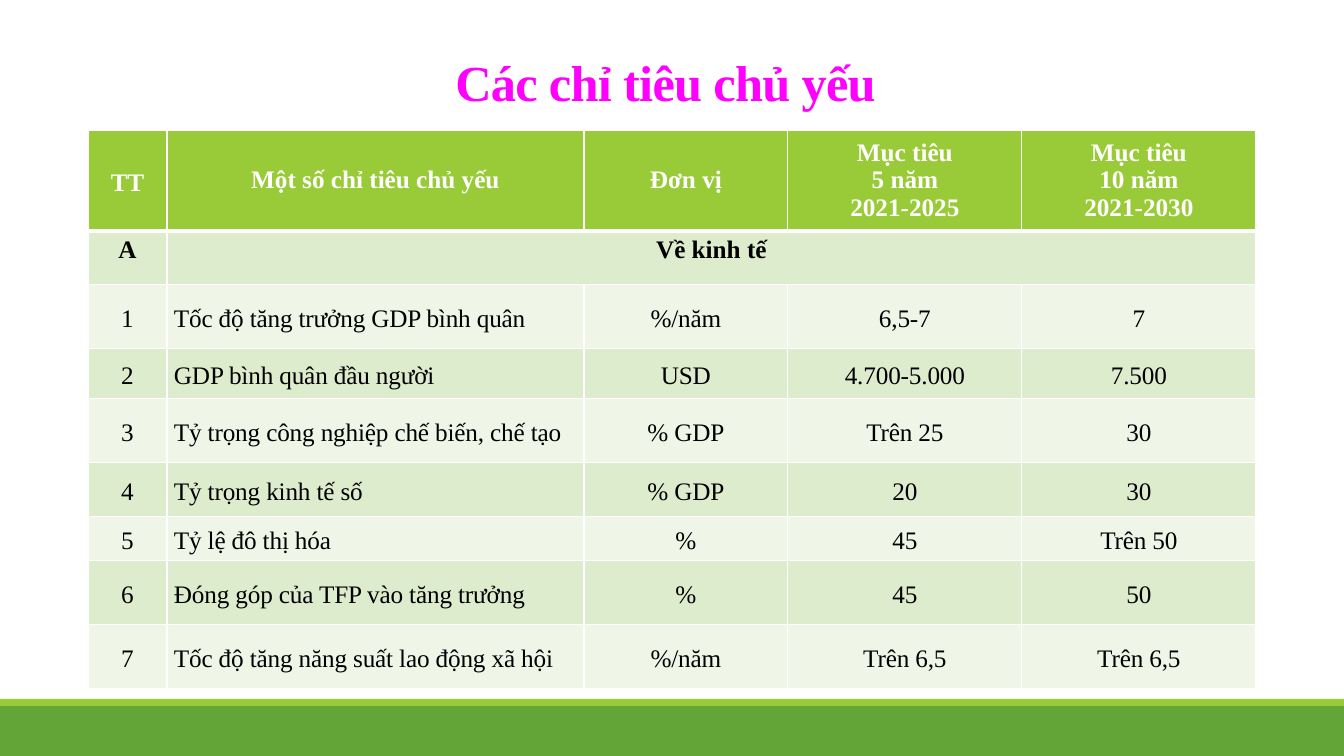
from lxml import etree
from pptx import Presentation
from pptx.dml.color import RGBColor
from pptx.enum.shapes import MSO_SHAPE
from pptx.enum.text import MSO_ANCHOR, PP_ALIGN
from pptx.oxml.ns import qn
from pptx.util import Pt

RECT = MSO_SHAPE.RECTANGLE
LEFT, CENTER = PP_ALIGN.LEFT, PP_ALIGN.CENTER
TOP, MIDDLE, BOTTOM = MSO_ANCHOR.TOP, MSO_ANCHOR.MIDDLE, MSO_ANCHOR.BOTTOM

TITLE = "Các chỉ tiêu chủ yếu"
HEADER = ["TT", "Một số chỉ tiêu chủ yếu", "Đơn vị",
          "Mục tiêu\n5 năm\n2021-2025", "Mục tiêu\n10 năm\n2021-2030"]
SECTION = ["A", "Về kinh tế"]
TARGETS = [
    ["1", "Tốc độ tăng trưởng GDP bình quân", "%/năm", "6,5-7", "7"],
    ["2", "GDP bình quân đầu người", "USD", "4.700-5.000", "7.500"],
    ["3", "Tỷ trọng công nghiệp chế biến, chế tạo", "% GDP", "Trên 25", "30"],
    ["4", "Tỷ trọng kinh tế số", "% GDP", "20", "30"],
    ["5", "Tỷ lệ đô thị hóa", "%", "45", "Trên 50"],
    ["6", "Đóng góp của TFP vào tăng trưởng", "%", "45", "50"],
    ["7", "Tốc độ tăng năng suất lao động xã hội", "%/năm", "Trên 6,5", "Trên 6,5"],
]
ROWS = [HEADER, SECTION] + TARGETS

COLORS = {"title": "FF00FF", "header": "99CB38", "odd": "DEECCE", "even": "EFF6E8",
          "footer": "63A537", "stripe": "99CB38", "white": "FFFFFF", "black": "000000"}
FONT = "Times New Roman"
SCALE = 914400 / 100.8
SLIDE_W, SLIDE_H = 1344, 756
TITLE_BOX = (121, 26, 1089, 91)
BARS = [("footer", 706, 50), ("stripe", 699, 7)]
TABLE_LEFT, TABLE_TOP = 88, 130
COL_WIDTHS = [79, 417, 204, 234, 234]
ROW_HEIGHTS = [93, 54, 64, 50, 64, 54, 44, 64, 64]

NORMAL_INSETS = {"margin_left": 10, "margin_right": 10, "margin_top": 5, "margin_bottom": 5}
TIGHT_INSETS = {"margin_left": 7, "margin_right": 7, "margin_top": 0, "margin_bottom": 0}
TITLE_PARA = {"alignment": CENTER, "line_spacing": 0.85}
LOOSE_PARA = {"line_spacing": 1.15, "space_before": Pt(12), "space_after": Pt(12)}


def px(n):
    return round(n * SCALE)


def rgb(name):
    return RGBColor.from_string(COLORS[name])


def apply(target, values):
    for name, value in values.items():
        setattr(target, name, value)


def set_insets(target, insets):
    apply(target, {name: px(n) for name, n in insets.items()})


def write(tf, text, para, color, size, bold, spacing):
    for i, line in enumerate(text.split("\n")):
        p = tf.paragraphs[0] if i == 0 else tf.add_paragraph()
        apply(p, para)
        r = p.add_run()
        r.text = line
        apply(r.font, {"name": FONT, "size": Pt(size), "bold": bold})
        r.font.color.rgb = rgb(color)
        r._r.get_or_add_rPr().set("spc", str(spacing))


def set_borders(cell, widths):
    tcPr = cell._tc.get_or_add_tcPr()
    for i, (side, width) in enumerate(widths.items()):
        ln = etree.Element(qn("a:ln" + side), w=str(Pt(width)))
        fill = etree.SubElement(ln, qn("a:solidFill"))
        etree.SubElement(fill, qn("a:srgbClr"), val=COLORS["white"])
        tcPr.insert(i, ln)


def fill_cell(cell, row, col, text):
    header, target = row == 0, row > 1
    loose = target or (header and col == 0)
    para = {"alignment": LEFT if target and col == 1 else CENTER}
    if loose:
        para.update(LOOSE_PARA)
    set_insets(cell, TIGHT_INSETS if loose else NORMAL_INSETS)
    cell.vertical_anchor = TOP if row == 1 else MIDDLE
    write(cell.text_frame, text, para, "white" if header else "black",
          18, not target, -10 if loose else 0)
    cell.fill.solid()
    cell.fill.fore_color.rgb = rgb("header" if header else "odd" if row % 2 else "even")
    set_borders(cell, {"L": 1, "R": 1, "T": 3 if row == 1 else 1, "B": 3 if header else 1})


def main():
    prs = Presentation()
    prs.slide_width, prs.slide_height = px(SLIDE_W), px(SLIDE_H)
    s = prs.slides.add_slide(prs.slide_layouts[6])

    for color, top, height in BARS:
        sp = s.shapes.add_shape(RECT, 0, px(top), px(SLIDE_W), px(height))
        sp.shadow.inherit = False
        sp.fill.solid()
        sp.fill.fore_color.rgb = rgb(color)
        sp.line.fill.background()

    tf = s.shapes.add_textbox(*map(px, TITLE_BOX)).text_frame
    apply(tf, {"word_wrap": True, "vertical_anchor": BOTTOM})
    set_insets(tf, NORMAL_INSETS)
    write(tf, TITLE, TITLE_PARA, "title", 36, True, -50)

    table = s.shapes.add_table(len(ROWS), len(COL_WIDTHS), px(TABLE_LEFT), px(TABLE_TOP),
                               px(sum(COL_WIDTHS)), px(sum(ROW_HEIGHTS))).table
    for column, width in zip(table.columns, COL_WIDTHS):
        column.width = px(width)
    for row, height in zip(table.rows, ROW_HEIGHTS):
        row.height = px(height)
    table.cell(1, 1).merge(table.cell(1, len(COL_WIDTHS) - 1))
    for i, texts in enumerate(ROWS):
        for j, text in enumerate(texts):
            fill_cell(table.cell(i, j), i, j, text)

    prs.save("out.pptx")


if __name__ == "__main__":
    main()
